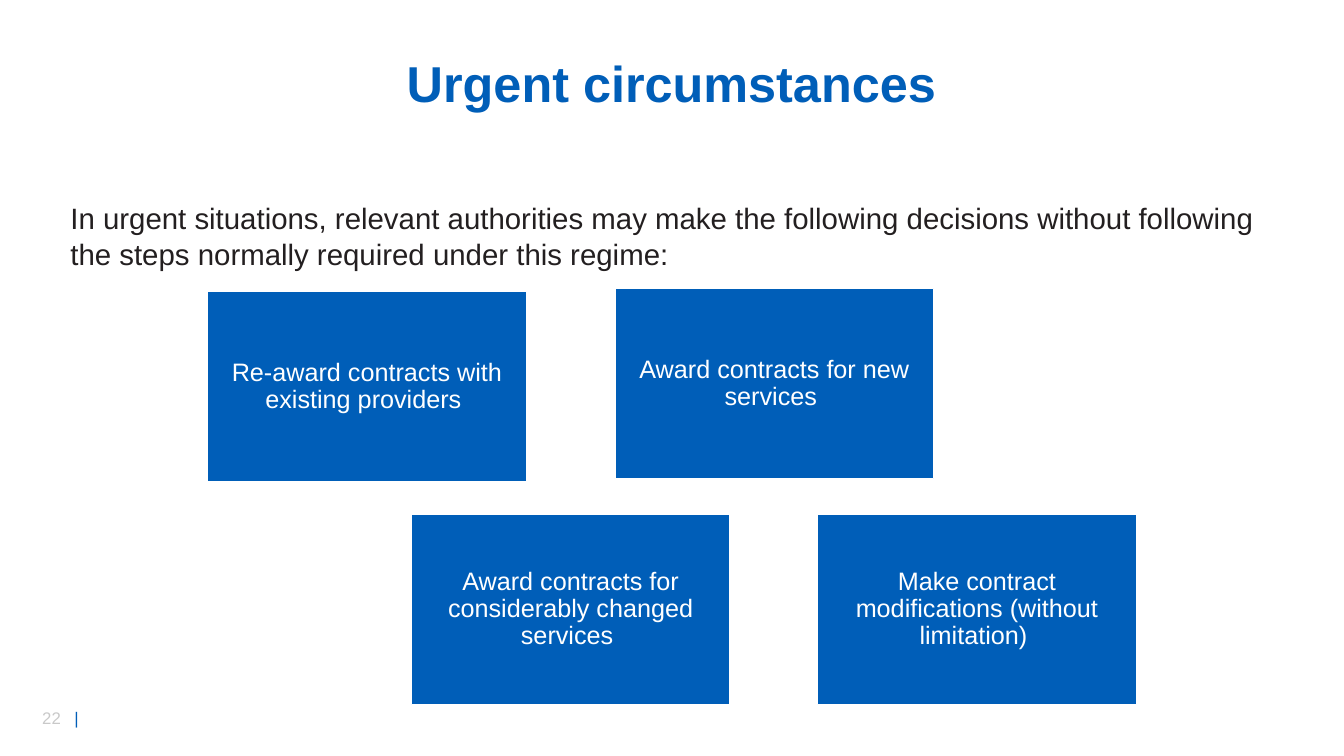
from lxml import etree
from pptx import Presentation
from pptx.dml.color import RGBColor
from pptx.enum.shapes import MSO_SHAPE
from pptx.enum.text import MSO_ANCHOR, MSO_AUTO_SIZE, PP_ALIGN
from pptx.oxml.ns import qn
from pptx.util import Inches, Pt

RECTANGLE = MSO_SHAPE.RECTANGLE
MIDDLE, TOP = MSO_ANCHOR.MIDDLE, MSO_ANCHOR.TOP
CENTER, LEFT = PP_ALIGN.CENTER, PP_ALIGN.LEFT
NO_AUTOFIT = MSO_AUTO_SIZE.NONE

FONT = "Arial"
BLUE, WHITE, DARK, GREY = "005EB8", "FFFFFF", "231F20", "C9C9C9"

DECISION_SIZE = (3.16, 1.89)
DECISIONS = [
    ("Re-award contracts with existing providers ", 2.06, 2.89),
    ("Award contracts for new services ", 6.1, 2.86),
    ("Award contracts for considerably changed services ", 4.08, 5.1),
    ("Make contract modifications (without limitation) ", 8.11, 5.1),
]


def color(hex_value):
    return RGBColor.from_string(hex_value)


def add_run(paragraph, text, size, hex_value, bold=False):
    run = paragraph.add_run()
    run.text = text
    run.font.name = FONT
    run.font.size = Pt(size)
    run.font.bold = bold
    run.font.color.rgb = color(hex_value)


def format_paragraph(frame, align, anchor, spacing=1.0):
    """Set up the frame and return its first paragraph."""
    frame.word_wrap = True
    frame.auto_size = NO_AUTOFIT
    frame.vertical_anchor = anchor
    paragraph = frame.paragraphs[0]
    paragraph.alignment = align
    paragraph.line_spacing = spacing
    return paragraph


def set_title(slide, text):
    title = slide.shapes.title
    title.left, title.top = Inches(3.63), Inches(0.38)
    title.width, title.height = Inches(6.06), Inches(0.95)
    paragraph = format_paragraph(title.text_frame, CENTER, MIDDLE, 0.9)
    add_run(paragraph, text, 36, BLUE, bold=True)


def add_text(slide, left, top, width, height):
    box = slide.shapes.add_textbox(
        Inches(left), Inches(top), Inches(width), Inches(height))
    return format_paragraph(box.text_frame, LEFT, TOP)


def add_tab_stop(paragraph, position):
    properties = paragraph._p.get_or_add_pPr()
    stops = etree.SubElement(properties, qn("a:tabLst"))
    etree.SubElement(stops, qn("a:tab"), pos=str(Inches(position)), algn="l")


def add_page_number(slide, number):
    paragraph = add_text(slide, 0.32, 6.97, 0.71, 0.3)
    add_tab_stop(paragraph, 0.32)
    add_run(paragraph, f"{number}\t", 12, GREY)
    add_run(paragraph, "|", 12, BLUE)


def add_decision(slide, text, left, top):
    width, height = DECISION_SIZE
    card = slide.shapes.add_shape(
        RECTANGLE, Inches(left), Inches(top), Inches(width), Inches(height))
    card.shadow.inherit = False
    card.fill.solid()
    card.fill.fore_color.rgb = color(BLUE)
    card.line.color.rgb = color(WHITE)
    card.line.width = Pt(1)
    frame = card.text_frame
    frame.margin_left = frame.margin_right = Inches(0.07)
    frame.margin_top = frame.margin_bottom = Inches(0.07)
    add_run(format_paragraph(frame, CENTER, MIDDLE, 0.9), text, 18, WHITE)


def main():
    deck = Presentation()
    deck.slide_width, deck.slide_height = Inches(13.33), Inches(7.5)
    title_only = deck.slide_layouts[5]
    slide = deck.slides.add_slide(title_only)

    add_page_number(slide, 22)
    set_title(slide, "Urgent circumstances")
    intro = add_text(slide, 0.6, 1.94, 12.13, 0.81)
    add_run(intro, "In urgent situations, relevant authorities may make the "
                   "following decisions without following the steps normally "
                   "required under this regime: ", 21, DARK)
    for text, left, top in DECISIONS:
        add_decision(slide, text, left, top)

    deck.save("out.pptx")


if __name__ == "__main__":
    main()
